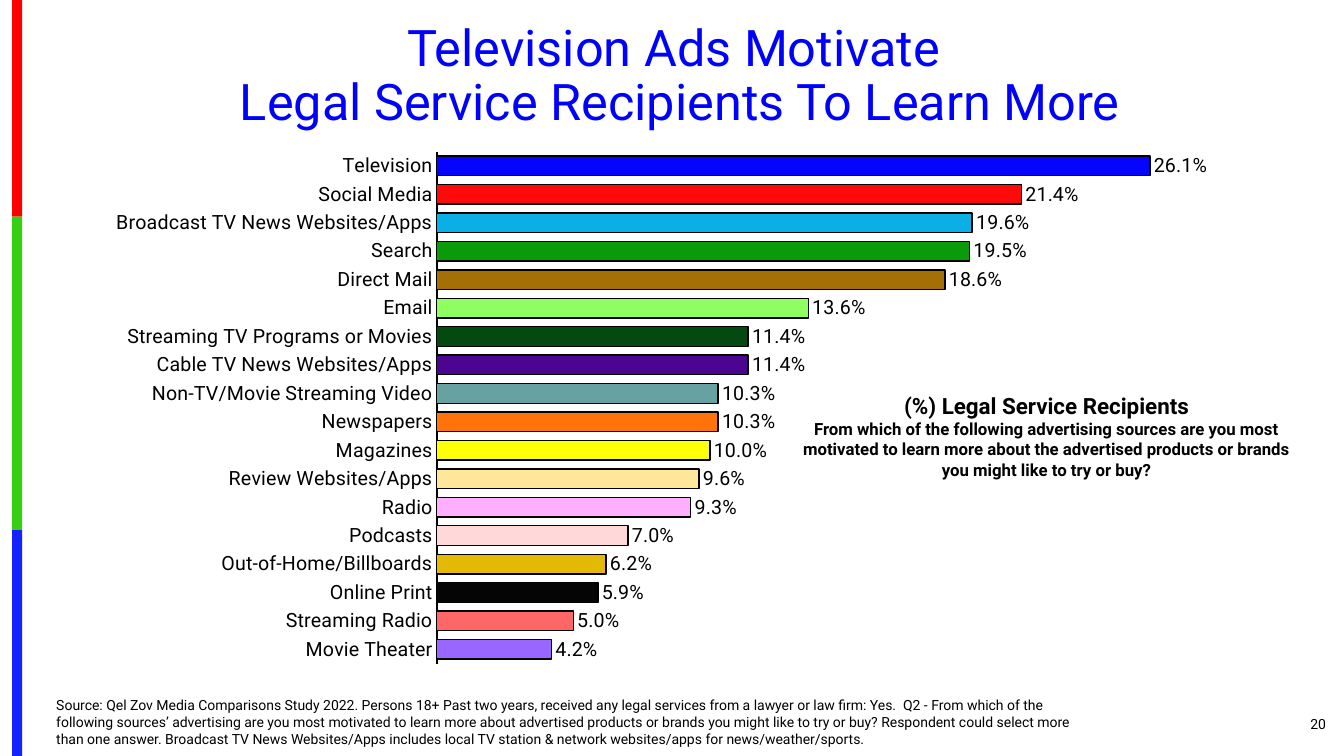
from dataclasses import dataclass
import pptx
import pptx.util
import pptx.chart.data
import pptx.dml.color
import pptx.enum.chart
import pptx.enum.shapes
import pptx.enum.text
import pptx.oxml

Align = pptx.enum.text.PP_ALIGN
Anchor = pptx.enum.text.MSO_ANCHOR
Pt = pptx.util.Pt
SCALE = 9144  # EMU per px, 100 px to the inch


@dataclass(frozen=True)
class Theme:
    face: str = "Roboto"
    ink: str = "000000"
    title: str = "0000FF"
    base: str = "CCCCCC"
    huge: int = 36
    head: int = 16
    label: int = 14
    body: int = 12
    small: int = 10


THEME = Theme()


@dataclass(frozen=True)
class Box:
    left: int
    top: int
    width: int
    height: int

    def emu(self) -> list[int]:
        return [n * SCALE for n in (self.left, self.top, self.width, self.height)]


@dataclass(frozen=True)
class Line:
    text: str
    size: int
    color: str = THEME.ink
    bold: bool = False
    space: float = 1.0


@dataclass(frozen=True)
class Note:
    box: Box
    lines: tuple[Line, ...]
    align: Align
    anchor: Anchor = Anchor.TOP


@dataclass(frozen=True)
class Band:
    height: int
    color: str


@dataclass(frozen=True)
class Bar:
    name: str
    value: float
    color: str


BANDS = (Band(215, "FE0000"), Band(311, "36CF12"), Band(224, "1322FE"))

BARS = (
    Bar("Television", 0.261, "0505FF"),
    Bar("Social Media", 0.214, "FF0A0A"),
    Bar("Broadcast TV News Websites/Apps", 0.196, "0AAFE6"),
    Bar("Search", 0.195, "0A9B0A"),
    Bar("Direct Mail", 0.186, "A46F05"),
    Bar("Email", 0.136, "8EFE60"),
    Bar("Streaming TV Programs or Movies", 0.114, "034910"),
    Bar("Cable TV News Websites/Apps", 0.114, "4B0590"),
    Bar("Non-TV/Movie Streaming Video", 0.103, "67A1A1"),
    Bar("Newspapers", 0.103, "FF730A"),
    Bar("Magazines", 0.1, "FFFF05"),
    Bar("Review Websites/Apps", 0.096, "FFE699"),
    Bar("Radio", 0.093, "FFAFFF"),
    Bar("Podcasts", 0.07, "FFD9D9"),
    Bar("Out-of-Home/Billboards", 0.062, "E3B905"),
    Bar("Online Print", 0.059, "050505"),
    Bar("Streaming Radio", 0.05, "FF6666"),
    Bar("Movie Theater", 0.042, "9966FF"),
)

NOTES = (
    Note(Box(12, 17, 1325, 119), (
        Line("Television Ads Motivate \vLegal Service Recipients To Learn More",
             THEME.huge, THEME.title, space=0.9),
    ), Align.CENTER, Anchor.MIDDLE),
    Note(Box(1217, 698, 108, 40), (Line("20", THEME.small),), Align.RIGHT, Anchor.MIDDLE),
    Note(Box(46, 685, 1037, 61), (
        Line("Source: Qel Zov Media Comparisons Study 2022. Persons 18+ Past two years, "
             "received any legal services from a lawyer or law firm: Yes.  Q2 - From which "
             "of the following sources’ advertising are you most motivated to learn more "
             "about advertised products or brands you might like to try or buy? Respondent "
             "could select more than one answer. Broadcast TV News Websites/Apps includes "
             "local TV station & network websites/apps for news/weather/sports.", THEME.small),
    ), Align.LEFT, Anchor.BOTTOM),
    Note(Box(775, 384, 526, 98), (
        Line("(%) Legal Service Recipients", THEME.head, bold=True),
        Line("From which of the following advertising sources are you most motivated to "
             "learn more about the advertised products or brands you might like to try "
             "or buy?", THEME.body, bold=True),
    ), Align.CENTER),
)


def rgb(code: str) -> pptx.dml.color.RGBColor:
    return pptx.dml.color.RGBColor.from_string(code)


def style(font, size: int, color: str = THEME.ink, bold: bool = False) -> None:
    font.name, font.size, font.bold = THEME.face, Pt(size), bold
    font.color.rgb = rgb(color)


def draw_band(slide, band: Band, top: int) -> None:
    kind = pptx.enum.shapes.MSO_SHAPE.RECTANGLE
    shape = slide.shapes.add_shape(kind, *Box(12, top, 10, band.height).emu())
    shape.shadow.inherit = False
    shape.fill.solid()
    shape.fill.fore_color.rgb = rgb(band.color)
    shape.line.fill.background()


def draw_note(slide, note: Note) -> None:
    frame = slide.shapes.add_textbox(*note.box.emu()).text_frame
    frame.word_wrap = True
    frame.vertical_anchor = note.anchor
    for i, line in enumerate(note.lines):
        para = frame.add_paragraph() if i else frame.paragraphs[0]
        para.text = line.text
        para.alignment = note.align
        para.line_spacing = line.space
        style(para.font, line.size, line.color, line.bold)


def set_plot(chart, **spots: float) -> None:
    """Fix the inner plot area as fractions of the chart."""
    modes = '<c:xMode val="edge"/><c:yMode val="edge"/>'
    sizes = "".join(f'<c:{key} val="{val}"/>' for key, val in spots.items())
    space = "http://schemas.openxmlformats.org/drawingml/2006/chart"
    area = chart.plots[0]._element.getparent()
    for old in area.findall(f"{{{space}}}layout"):
        area.remove(old)
    area.insert(0, pptx.oxml.parse_xml(
        f'<c:layout xmlns:c="{space}"><c:manualLayout><c:layoutTarget val="inner"/>'
        f"{modes}{sizes}</c:manualLayout></c:layout>"))


def draw_chart(slide, box: Box, bars: tuple[Bar, ...]) -> None:
    enum = pptx.enum.chart
    data = pptx.chart.data.CategoryChartData(number_format="0.0%")
    data.categories = [bar.name for bar in bars]
    data.add_series("Series 1", [bar.value for bar in bars])
    chart = slide.shapes.add_chart(
        enum.XL_CHART_TYPE.BAR_CLUSTERED, *box.emu(), data).chart
    chart.has_legend = chart.has_title = False
    style(chart.font, THEME.small)
    set_plot(chart, x=0.317, y=0.027, w=0.666, h=0.946)

    # Axes
    cats, vals = chart.category_axis, chart.value_axis
    cats.reverse_order = True
    cats.major_tick_mark = cats.minor_tick_mark = enum.XL_TICK_MARK.NONE
    cats.format.line.color.rgb = rgb(THEME.ink)
    cats.format.line.width = Pt(1.5)
    style(cats.tick_labels.font, THEME.label)
    vals.minimum_scale, vals.maximum_scale = 0, 0.3
    vals.has_major_gridlines = False
    vals.visible = False

    # Bars and their labels
    plot = chart.plots[0]
    plot.gap_width = 45
    plot.vary_by_categories = False
    series = plot.series[0]
    series.invert_if_negative = False
    series.format.fill.solid()
    series.format.fill.fore_color.rgb = rgb(THEME.base)
    for i, bar in enumerate(bars):
        look = series.points[i].format
        look.fill.solid()
        look.fill.fore_color.rgb = rgb(bar.color)
        look.line.color.rgb = rgb(THEME.ink)
        look.line.width = Pt(1)
    labels = series.data_labels
    labels.show_value = True
    labels.number_format, labels.number_format_is_linked = "0.0%", False
    labels.position = enum.XL_LABEL_POSITION.OUTSIDE_END
    style(labels.font, THEME.label)


def main() -> None:
    deck = pptx.Presentation()
    deck.slide_width, deck.slide_height = 1333 * SCALE, 750 * SCALE
    slide = deck.slides.add_slide(deck.slide_layouts[6])

    # Colour strip at the left edge
    top = 0
    for band in BANDS:
        draw_band(slide, band, top)
        top += band.height

    # Chart, then the text over it
    draw_chart(slide, Box(46, 136, 1221, 537), BARS)
    for note in NOTES:
        draw_note(slide, note)
    deck.save("out.pptx")


if __name__ == "__main__":
    main()
